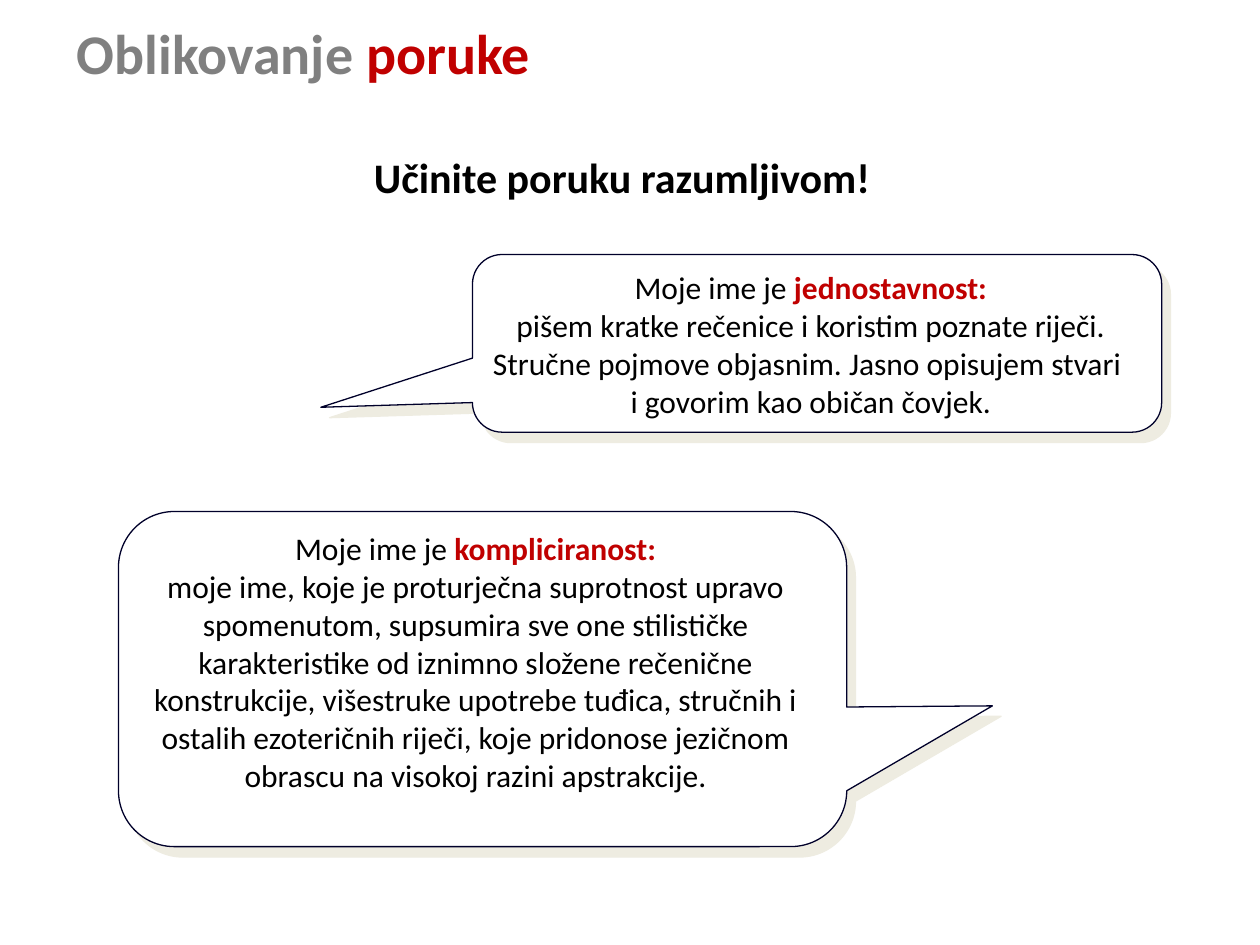
import pptx
import pptx.util
from pptx.dml.color import RGBColor
from pptx.enum.shapes import MSO_SHAPE
from pptx.enum.text import MSO_ANCHOR, PP_ALIGN
from pptx.oxml import parse_xml
from pptx.oxml.ns import nsdecls
from pptx.util import Inches

# Content: each paragraph is a list of (text, colour, bold) runs
GREY, RED, BLACK = "808080", "C00000", "000000"
TITLE = [[("Oblikovanje ", GREY, True), ("poruke", RED, True)]]
SUBTITLE = [[("Učinite poruku razumljivom!", BLACK, True)]]
BUBBLES = [
    {
        "box": (0.94, 4.06, 5.78, 2.66),
        "tail": (0.7, 0.08),
        "text_box": (1, 4.15, 5.55, 2.49),
        "name": "kompliciranost:",
        "lines": [
            "moje ime, koje je proturječna suprotnost upravo spomenutom, "
            "supsumira sve one stilističke karakteristike od iznimno složene "
            "rečenične konstrukcije, višestruke upotrebe tuđica, stručnih i "
            "ostalih ezoteričnih riječi, koje pridonose jezičnom obrascu na "
            "visokoj razini apstrakcije.",
        ],
    },
    {
        "box": (3.75, 2.02, 5.47, 1.41),
        "tail": (-0.72, 0.36),
        "text_box": (3.66, 2.08, 5.55, 1.31),
        "name": "jednostavnost:",
        "lines": [
            "pišem kratke rečenice i koristim poznate riječi. Stručne pojmove "
            "objasnim. Jasno opisujem stvari ",
            "i govorim kao običan čovjek.",
        ],
    },
]


def colour(hex_code):
    return RGBColor.from_string(hex_code)


def write(frame, paragraphs, size, align):
    frame.word_wrap = True
    for index, runs in enumerate(paragraphs):
        paragraph = frame.paragraphs[0] if index == 0 else frame.add_paragraph()
        paragraph.alignment = align
        paragraph.font.name = "Calibri"
        paragraph.font.size = pptx.util.Pt(size)
        for text, hex_code, bold in runs:
            run = paragraph.add_run()
            run.text = text
            run.font.name = "Calibri"
            run.font.size = pptx.util.Pt(size)
            run.font.bold = bold
            run.font.color.rgb = colour(hex_code)


def add_text(slide, box, paragraphs, size, align):
    shape = slide.shapes.add_textbox(*map(Inches, box))
    write(shape.text_frame, paragraphs, size, align)


def add_callout(slide, box, tail):
    shape = slide.shapes.add_shape(
        MSO_SHAPE.ROUNDED_RECTANGULAR_CALLOUT, *map(Inches, box))
    shape.adjustments[0], shape.adjustments[1] = tail
    shape.fill.solid()
    shape.fill.fore_color.rgb = colour("FFFFFF")
    shape.line.color.rgb = colour("00002A")
    shape.line.width = pptx.util.Pt(0.75)
    # Hard offset shadow, 7.8 pt at 50 degrees
    shape._element.spPr.append(parse_xml(
        f'<a:effectLst {nsdecls("a")}>'
        f'<a:outerShdw dist="{pptx.util.Pt(7.8)}" dir="{50 * 60000}" '
        'algn="ctr" rotWithShape="0"><a:srgbClr val="EEECE1"/>'
        '</a:outerShdw></a:effectLst>'))


def main():
    presentation = pptx.Presentation()
    presentation.slide_width = Inches(10)
    presentation.slide_height = Inches(7.5)
    slide = presentation.slides.add_slide(presentation.slide_layouts[5])

    # Speech bubbles
    for bubble in BUBBLES:
        add_callout(slide, bubble["box"], bubble["tail"])

    # Title and subtitle
    title = slide.shapes.title
    title.left, title.top, title.width, title.height = map(
        Inches, (0.51, 0.05, 7.97, 0.72))
    title.text_frame.vertical_anchor = MSO_ANCHOR.MIDDLE
    write(title.text_frame, TITLE, 32, PP_ALIGN.LEFT)
    add_text(slide, (2.87, 1.15, 5.03, 0.5), SUBTITLE, 24, PP_ALIGN.LEFT)

    # Bubble texts
    for bubble in BUBBLES:
        paragraphs = [[("Moje ime je ", BLACK, False), (bubble["name"], RED, True)]]
        paragraphs += [[(line, BLACK, False)] for line in bubble["lines"]]
        add_text(slide, bubble["text_box"], paragraphs, 18, PP_ALIGN.CENTER)

    presentation.save("out.pptx")


if __name__ == "__main__":
    main()
